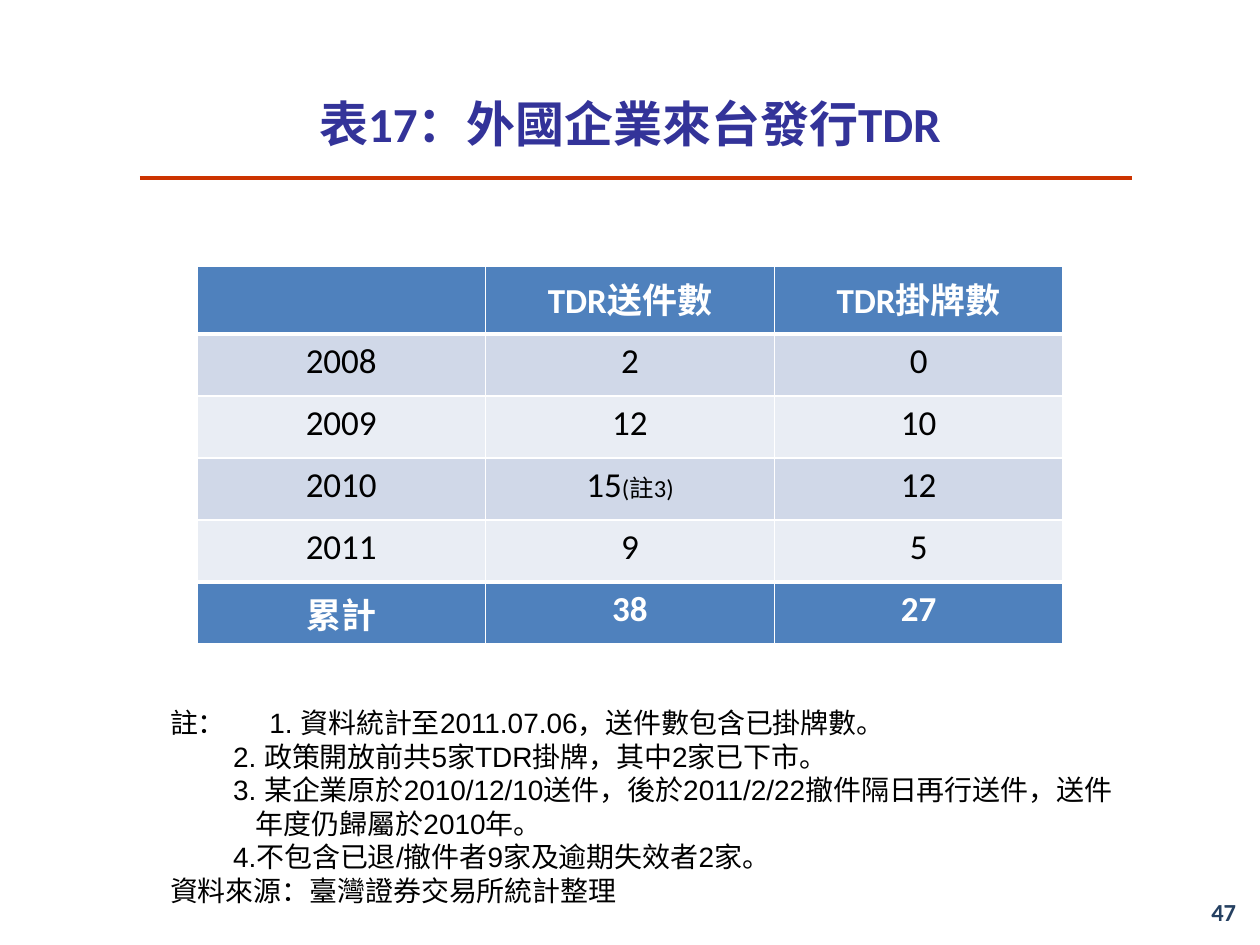
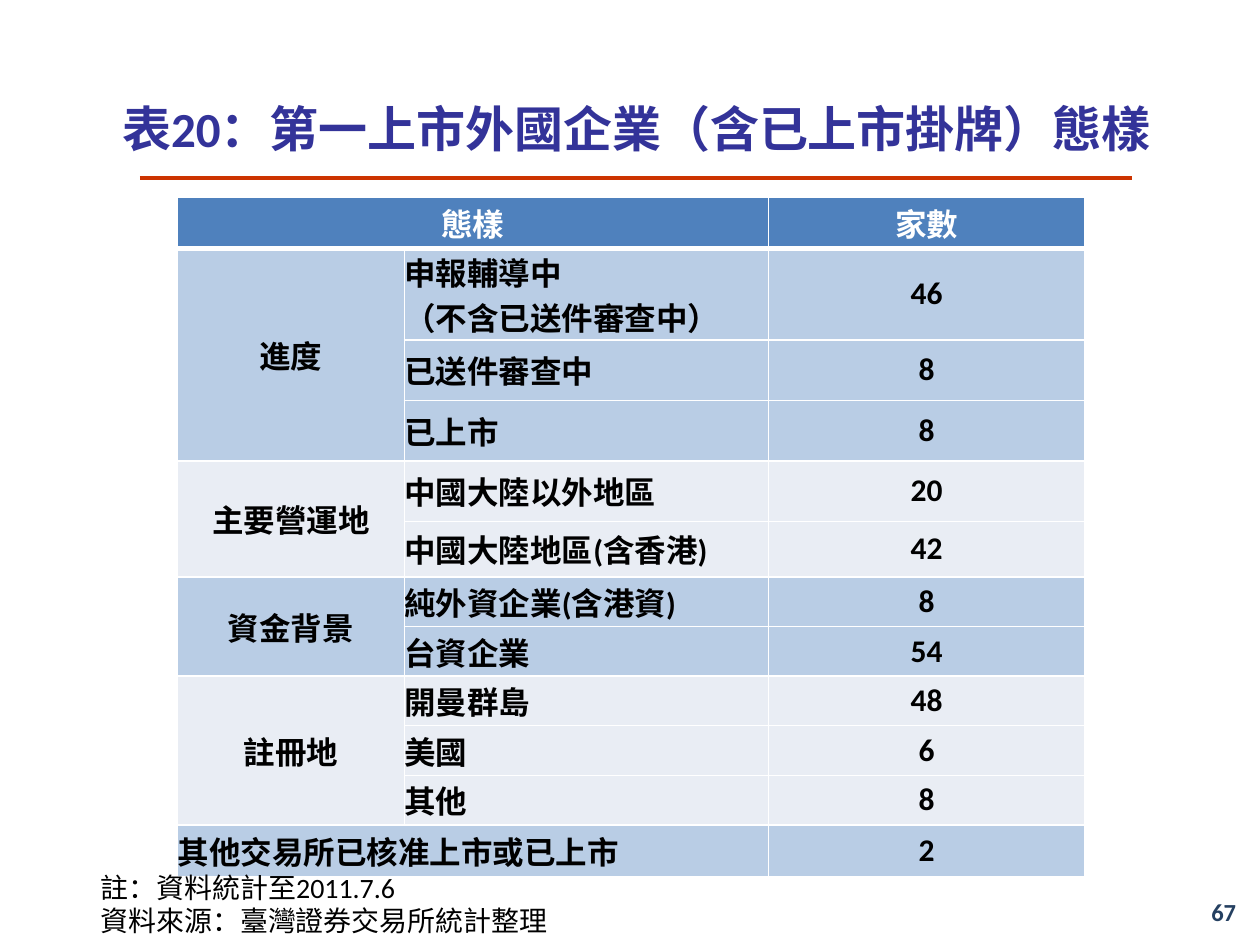
from lxml.etree import SubElement
from pptx import Presentation
from pptx.dml.color import RGBColor
from pptx.enum.shapes import MSO_CONNECTOR
from pptx.enum.text import MSO_ANCHOR, PP_ALIGN
from pptx.oxml.ns import qn
from pptx.util import Cm, Pt

# Shared look
rgb = RGBColor.from_string
WHITE, BLACK = "FFFFFF", "000000"
TITLE_INK, RULE, PAGE_INK = "333399", "CC3300", "254061"
HEADER, BAND, BAND_STRONG, BAND_LIGHT = "4F81BD", "D0D8E8", "B9CDE5", "E9EDF4"
SOURCE = "資料來源：臺灣證券交易所統計整理"
LEFT, CENTER, RIGHT = PP_ALIGN.LEFT, PP_ALIGN.CENTER, PP_ALIGN.RIGHT


def write(frame, text, *, size=16, color=BLACK, bold=False, font="Calibri",
          align=LEFT, margin=0, indent=0, tab=0, same_line=False):
    """Add text as a new paragraph, or to the end of the last one."""
    paragraph = frame.paragraphs[-1]
    if paragraph.runs and not same_line:
        paragraph = frame.add_paragraph()
    paragraph.alignment = align
    if margin:
        properties = paragraph._p.get_or_add_pPr()
        properties.set("marL", str(Cm(margin)))
        properties.set("indent", str(Cm(indent)))
        if tab:
            stops = SubElement(properties, qn("a:tabLst"))
            SubElement(stops, qn("a:tab"), pos=str(Cm(tab)), algn="l")
    run = paragraph.add_run()
    run.text = text
    run.font.name, run.font.size, run.font.bold = font, Pt(size), bold
    run.font.color.rgb = rgb(color)


def paint_cell(cell, fill, top=1, bottom=1):
    """Fill a cell and give it white borders, widths in points."""
    properties = cell._tc.get_or_add_tcPr()
    for side, width in (("L", 1), ("R", 1), ("T", top), ("B", bottom)):
        border = SubElement(properties, qn(f"a:ln{side}"), w=str(Pt(width)))
        solid = SubElement(border, qn("a:solidFill"))
        SubElement(solid, qn("a:srgbClr"), val=WHITE)
    cell.fill.solid()
    cell.fill.fore_color.rgb = rgb(fill)


prs = Presentation()
prs.slide_width, prs.slide_height = Cm(25.4), Cm(19.05)

# Title, rule and page number of each slide
headings = [
    ("表17：外國企業來台發行TDR", "47", (1.27, 1.19, 22.86, 2.59)),
    ("表20：第一上市外國企業（含已上市掛牌）態樣", "67", (1.4, 0.99, 22.86, 3.18)),
]
slides = []
for heading, number, place in headings:
    slide = prs.slides.add_slide(prs.slide_layouts[5])
    slides.append(slide)

    title = slide.shapes.title
    title.left, title.top, title.width, title.height = map(Cm, place)
    title.text_frame.vertical_anchor = MSO_ANCHOR.MIDDLE
    write(title.text_frame, heading, size=28, color=TITLE_INK, bold=True, align=CENTER)

    rule = slide.shapes.add_connector(
        MSO_CONNECTOR.STRAIGHT, Cm(2.82), Cm(3.58), Cm(22.81), Cm(3.58))
    rule.line.color.rgb = rgb(RULE)
    rule.line.width = Pt(2.25)
    SubElement(rule._element.spPr, qn("a:effectLst"))

    page = slide.shapes.add_textbox(Cm(19.25), Cm(17.86), Cm(5.92), Cm(1.02)).text_frame
    page.word_wrap = True
    page.vertical_anchor = MSO_ANCHOR.MIDDLE
    write(page, number, size=14, color=PAGE_INK, bold=True, align=RIGHT)

tdr_slide, listing_slide = slides

# Table 17: filings and listings per year
tdr_rows = [
    ("", "TDR送件數", "TDR掛牌數"),
    ("2008", "2", "0"),
    ("2009", "12", "10"),
    ("2010", "15", "12"),
    ("2011", "9", "5"),
    ("累計", "38", "27"),
]
last = len(tdr_rows) - 1
tdr_table = tdr_slide.shapes.add_table(
    len(tdr_rows), 3, Cm(3.97), Cm(5.37), Cm(17.46), Cm(7.7)).table
tdr_table.horz_banding = False
for r, values in enumerate(tdr_rows):
    tdr_table.rows[r].height = Cm(1.25 if r else 1.36)
    strong = r in (0, last)
    fill = HEADER if strong else BAND if r % 2 else BAND_LIGHT
    for c, value in enumerate(values):
        cell = tdr_table.cell(r, c)
        paint_cell(cell, fill, top=3 if r in (1, last) else 1,
                   bottom=3 if r in (0, last - 1) else 1)
        if value:
            write(cell.text_frame, value, size=20, bold=strong,
                  color=WHITE if strong else BLACK, align=CENTER)
write(tdr_table.cell(3, 1).text_frame, "(註3)", size=14, align=CENTER, same_line=True)

# Notes under table 17
notes = tdr_slide.shapes.add_textbox(Cm(3.18), Cm(14.1), Cm(19.63), Cm(4.37)).text_frame
notes.word_wrap = True
write(notes, "註：\t1. 資料統計至2011.07.06，送件數包含已掛牌數。",
      font="Arial", margin=2, indent=-2, tab=1.27)
for note in (
    "2. 政策開放前共5家TDR掛牌，其中2家已下市。",
    "3. 某企業原於2010/12/10送件，後於2011/2/22撤件隔日再行送件，送件年度仍歸屬於2010年。",
    "4.不包含已退/撤件者9家及逾期失效者2家。",
):
    write(notes, note, font="Arial", margin=1.73, indent=-0.46)
write(notes, SOURCE, font="Arial", margin=2, indent=-2)

# Table 20: groups of listed foreign companies
groups = [
    ("態樣", [("", "家數")]),
    ("進度", [("申報輔導中\n（不含已送件審查中）", "46"), ("已送件審查中", "8"), ("已上市", "8")]),
    ("主要營運地", [("中國大陸以外地區", "20"), ("中國大陸地區(含香港)", "42")]),
    ("資金背景", [("純外資企業(含港資)", "8"), ("台資企業", "54")]),
    ("註冊地", [("開曼群島", "48"), ("美國", "6"), ("其他", "8")]),
    ("其他交易所已核准上市或已上市", [("", "2")]),
]
heights = [1.04, 1.84, 1.22, 1.22, 1.22, 1.12] + [1] * 5 + [1.04]
widths = [4.57, 7.34, 6.38]
listing_table = listing_slide.shapes.add_table(
    len(heights), 3, Cm(3.58), Cm(3.97), Cm(sum(widths)), Cm(sum(heights))).table
listing_table.horz_banding = False
for column, width in zip(listing_table.columns, widths):
    column.width = Cm(width)
for row, height in zip(listing_table.rows, heights):
    row.height = Cm(height)

r = 0
for g, (group, entries) in enumerate(groups):
    fill = HEADER if g == 0 else BAND_STRONG if g % 2 else BAND_LIGHT
    # The closing group has no subdivision and takes the stronger band
    if g == len(groups) - 1:
        fill = BAND_STRONG
    start = r
    for item, count in entries:
        texts = (group if r == start else "", item, count)
        for c, text in enumerate(texts):
            cell = listing_table.cell(r, c)
            paint_cell(cell, fill, top=3 if r == 1 else 1, bottom=3 if r == 0 else 1)
            cell.margin_left = cell.margin_right = cell.margin_top = cell.margin_bottom = 0
            cell.vertical_anchor = MSO_ANCHOR.MIDDLE
            to_left = c == 1 or (c == 0 and g == len(groups) - 1)
            for line in text.splitlines():
                write(cell.text_frame, line, size=18, bold=True,
                      color=BLACK if g else WHITE, align=LEFT if to_left else CENTER)
        r += 1
    undivided = not entries[0][0]
    listing_table.cell(start, 0).merge(listing_table.cell(r - 1, int(undivided)))

# Notes under table 20
remarks = listing_slide.shapes.add_textbox(Cm(1.78), Cm(17.42), Cm(20.83), Cm(1.63)).text_frame
remarks.word_wrap = True
for remark in ("註：資料統計至2011.7.6", SOURCE):
    write(remarks, remark, margin=2, indent=-2)

prs.save("out.pptx")
